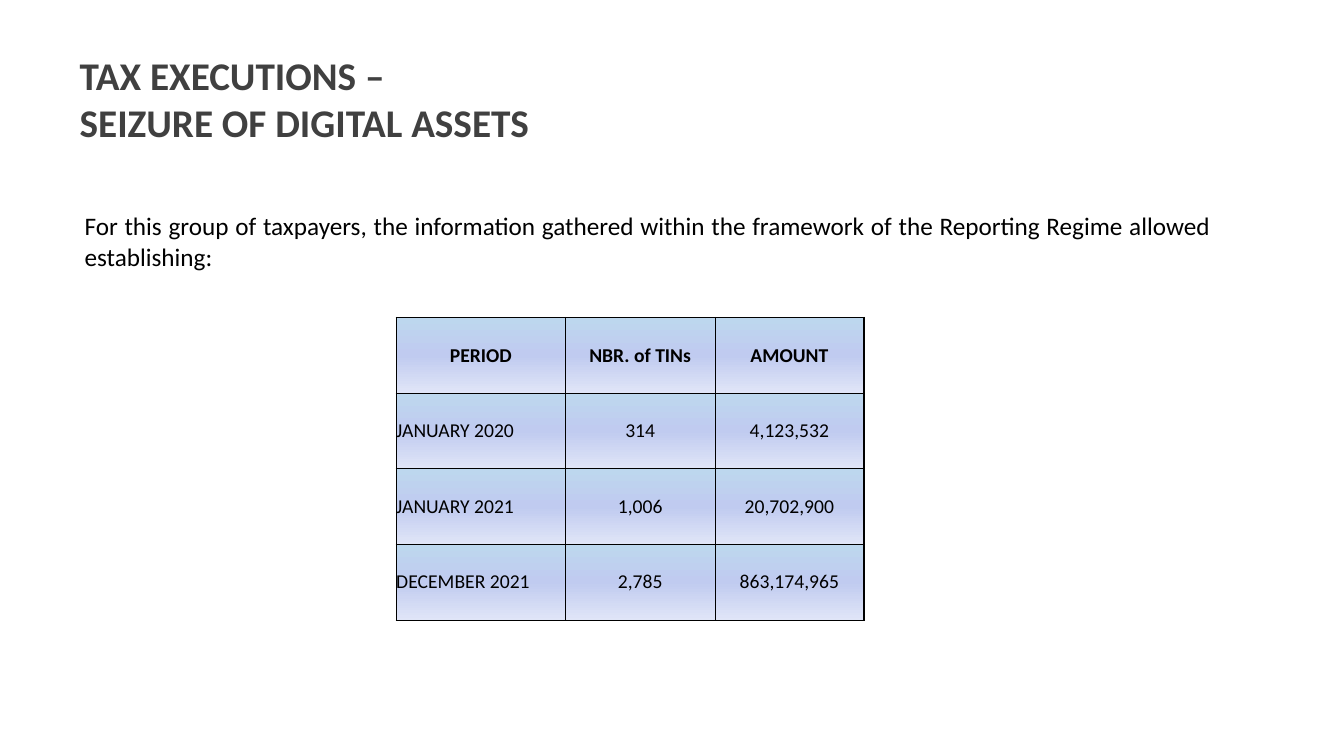
from dataclasses import dataclass

from lxml.etree import SubElement
from pptx import Presentation
from pptx.dml.color import RGBColor
from pptx.enum.text import MSO_ANCHOR as Anchor, PP_ALIGN as Align
from pptx.oxml.ns import qn
from pptx.slide import Slide
from pptx.table import _Cell as Cell
from pptx.util import Inches, Pt

FONT = "Calibri"
BLACK = RGBColor(0x00, 0x00, 0x00)
TITLE_GRAY = RGBColor(0x40, 0x40, 0x40)
SKY = RGBColor(0xBD, 0xD7, 0xEE)
LAVENDER = RGBColor(0xC0, 0xCB, 0xF0)
PALE_LAVENDER = RGBColor(0xE0, 0xE5, 0xF7)
CELL_GRADIENT = ((0, SKY), (50, LAVENDER), (100, PALE_LAVENDER))

OUTER_LINE, INNER_LINE = 1, 0.5
COLUMN_WIDTHS = (1.68, 1.48, 1.48)
ROW_HEIGHT = 0.75


@dataclass
class SeizureRow:
    period: str
    taxpayers: str
    amount: str
    header: bool = False


TITLE_LINES = ("TAX EXECUTIONS –", "SEIZURE OF DIGITAL ASSETS")
INTRODUCTION = (
    "For this group of taxpayers, the information gathered within the "
    "framework of the Reporting Regime allowed establishing:"
)
SEIZURES = (
    SeizureRow("PERIOD", "NBR. of TINs", "AMOUNT", header=True),
    SeizureRow("JANUARY 2020", "314", "4,123,532"),
    SeizureRow("JANUARY 2021", "1,006", "20,702,900"),
    SeizureRow("DECEMBER 2021", "2,785", "863,174,965"),
)


def format_paragraph(paragraph, size: float, color: RGBColor, align: Align, bold: bool = False) -> None:
    paragraph.alignment = align
    font = paragraph.font
    font.name, font.size, font.bold = FONT, Pt(size), bold
    font.color.rgb = color


def add_color(parent, color: RGBColor):
    return SubElement(parent, qn("a:srgbClr"), val=str(color))


def add_text_shadow(run) -> None:
    effects = SubElement(run.font._element, qn("a:effectLst"))
    shadow = SubElement(effects, qn("a:outerShdw"), blurRad=str(Pt(3)),
                        dist=str(Pt(3)), dir="5400000", algn="tl")
    SubElement(add_color(shadow, BLACK), qn("a:alpha"), val="40000")


def add_title(slide: Slide) -> None:
    title = slide.shapes.title
    title.left, title.top = Inches(0.69), Inches(0.46)
    title.width, title.height = Inches(6.63), Inches(1.04)
    frame = title.text_frame
    frame.vertical_anchor = Anchor.TOP
    frame.text = "\n".join(TITLE_LINES)
    for paragraph in frame.paragraphs:
        format_paragraph(paragraph, 28, TITLE_GRAY, Align.LEFT, bold=True)
        add_text_shadow(paragraph.runs[0])


def add_introduction(slide: Slide) -> None:
    box = slide.shapes.add_textbox(Inches(0.74), Inches(2.04), Inches(11.37), Inches(0.71))
    frame = box.text_frame
    frame.word_wrap = True
    frame.text = INTRODUCTION
    format_paragraph(frame.paragraphs[0], 18, BLACK, Align.JUSTIFY)


def style_cell(cell: Cell, borders: dict[str, float]) -> None:
    properties = cell._tc.get_or_add_tcPr()
    for side, width in borders.items():
        line = SubElement(properties, qn(f"a:ln{side}"), w=str(Pt(width)))
        add_color(SubElement(line, qn("a:solidFill")), BLACK)
    gradient = SubElement(properties, qn("a:gradFill"), rotWithShape="1")
    stops = SubElement(gradient, qn("a:gsLst"))
    for percent, color in CELL_GRADIENT:
        add_color(SubElement(stops, qn("a:gs"), pos=str(percent * 1000)), color)
    SubElement(gradient, qn("a:lin"), ang="5400000", scaled="0")


def add_seizure_table(slide: Slide) -> None:
    last_column = len(COLUMN_WIDTHS) - 1
    table = slide.shapes.add_table(
        len(SEIZURES), len(COLUMN_WIDTHS), Inches(3.93), Inches(3.15),
        Inches(sum(COLUMN_WIDTHS)), Inches(ROW_HEIGHT * len(SEIZURES)),
    ).table
    table.first_row = table.horz_banding = False
    for column, width in zip(table.columns, COLUMN_WIDTHS):
        column.width = Inches(width)

    for row_index, seizure in enumerate(SEIZURES):
        table.rows[row_index].height = Inches(ROW_HEIGHT)
        for column_index, text in enumerate((seizure.period, seizure.taxpayers, seizure.amount)):
            cell = table.cell(row_index, column_index)
            cell.text = text
            cell.vertical_anchor = Anchor.MIDDLE
            cell.margin_left = cell.margin_right = cell.margin_top = cell.margin_bottom = 0
            centered = seizure.header or column_index > 0
            format_paragraph(cell.text_frame.paragraphs[0], 14, BLACK,
                             Align.CENTER if centered else Align.LEFT, seizure.header)
            style_cell(cell, {
                "L": OUTER_LINE if column_index == 0 else INNER_LINE,
                "R": OUTER_LINE if column_index == last_column else INNER_LINE,
                "T": OUTER_LINE if row_index == 0 else INNER_LINE,
                "B": INNER_LINE,
            })


def main() -> None:
    presentation = Presentation()
    presentation.slide_width, presentation.slide_height = Inches(13.33), Inches(7.5)
    slide = presentation.slides.add_slide(presentation.slide_layouts[5])
    add_title(slide)
    add_introduction(slide)
    add_seizure_table(slide)
    presentation.save("out.pptx")


if __name__ == "__main__":
    main()
